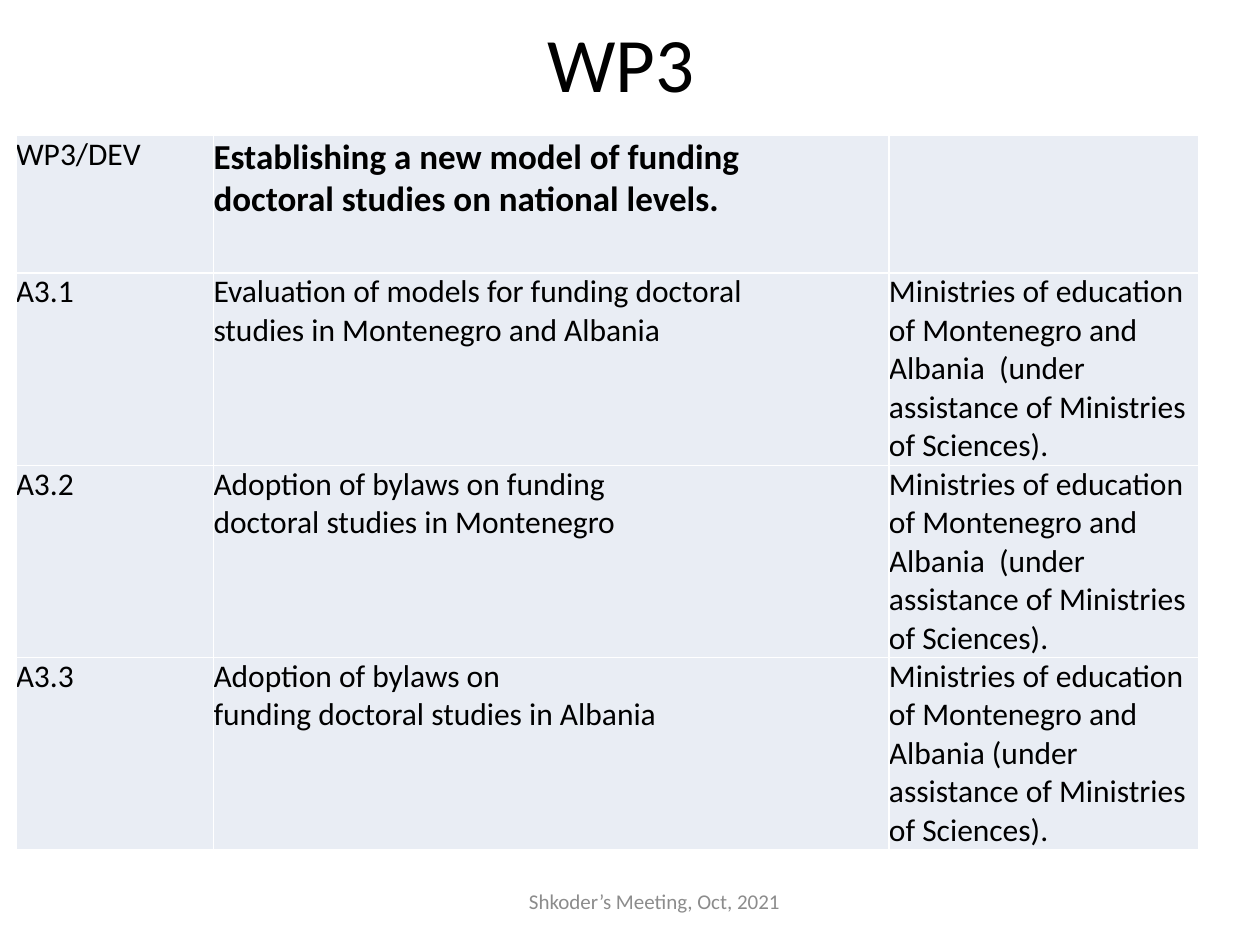
import pptx
import pptx.dml.color
import pptx.enum.text
import pptx.oxml.ns
import pptx.util
from lxml import etree

Pt = pptx.util.Pt
FONT = "Calibri"
COLORS = {"text": "000000", "footer": "8C8C8C", "cell": "E9EDF4", "border": "FFFFFF"}

COLUMN_WIDTHS = [113, 386, 177]
ROW_HEIGHTS = [78.5, 87, 87, 87]
MINISTRIES = ("Ministries of education of Montenegro and Albania{}(under assistance "
              "of Ministries of Sciences).")
ROWS = [
    ["WP3/DEV", "Establishing a new model of funding \ndoctoral studies on national levels.", ""],
    ["A3.1", "Evaluation of models for funding doctoral \nstudies in Montenegro and Albania",
     MINISTRIES.format("  ")],
    ["A3.2", "Adoption of bylaws on funding \ndoctoral studies in Montenegro",
     MINISTRIES.format("  ")],
    ["A3.3", "Adoption of bylaws on \nfunding doctoral studies in Albania",
     MINISTRIES.format(" ")],
]


def rgb(name):
    return pptx.dml.color.RGBColor.from_string(COLORS[name])


def write_text(text_frame, text, size, color="text", bold=False, centered=False):
    paragraph = text_frame.paragraphs[0]
    paragraph.text = text
    if centered:
        paragraph.alignment = pptx.enum.text.PP_ALIGN.CENTER
        text_frame.vertical_anchor = pptx.enum.text.MSO_ANCHOR.MIDDLE
    for run in paragraph.runs:
        run.font.name = FONT
        run.font.size = Pt(size)
        run.font.bold = bold
        run.font.color.rgb = rgb(color)


def place(shape, box):
    shape.left, shape.top, shape.width, shape.height = map(Pt, box)


def add_title(slide, box):
    title = slide.shapes.title
    place(title, box)
    title.text_frame.word_wrap = True
    write_text(title.text_frame, "WP3", 44, centered=True)


def style_cell(cell):
    # Borders come before the fill in the cell properties
    properties = cell._tc.get_or_add_tcPr()
    for side in ("lnL", "lnR", "lnT", "lnB"):
        line = etree.SubElement(properties, pptx.oxml.ns.qn("a:" + side), w=str(Pt(1)))
        fill = etree.SubElement(line, pptx.oxml.ns.qn("a:solidFill"))
        etree.SubElement(fill, pptx.oxml.ns.qn("a:srgbClr"), val=COLORS["border"])
    cell.fill.solid()
    cell.fill.fore_color.rgb = rgb("cell")
    cell.margin_left = cell.margin_right = cell.margin_top = cell.margin_bottom = 0


def add_activity_table(slide, box):
    frame = slide.shapes.add_table(len(ROWS), len(COLUMN_WIDTHS), *map(Pt, box))
    table = frame.table
    for column, width in zip(table.columns, COLUMN_WIDTHS):
        column.width = Pt(width)
    for row, height in zip(table.rows, ROW_HEIGHTS):
        row.height = Pt(height)
    for row_index, texts in enumerate(ROWS):
        for column_index, text in enumerate(texts):
            cell = table.cell(row_index, column_index)
            style_cell(cell)
            heading = (row_index, column_index) == (0, 1)
            write_text(cell.text_frame, text, 20 if heading else 18, bold=heading)
    place(frame, box)


def add_footer(slide, box):
    footer = slide.shapes.add_textbox(*map(Pt, box))
    footer.text_frame.word_wrap = True
    write_text(footer.text_frame, "Shkoder’s Meeting, Oct, 2021", 12, "footer", centered=True)


def main():
    presentation = pptx.Presentation()
    presentation.slide_width, presentation.slide_height = Pt(720), Pt(540)
    slide = presentation.slides.add_slide(presentation.slide_layouts[5])
    add_title(slide, (31, -10, 648, 90))
    add_activity_table(slide, (9, 77.5, 676, 402.5))
    add_footer(slide, (246, 500.5, 256, 28.75))
    presentation.save("out.pptx")


if __name__ == "__main__":
    main()
